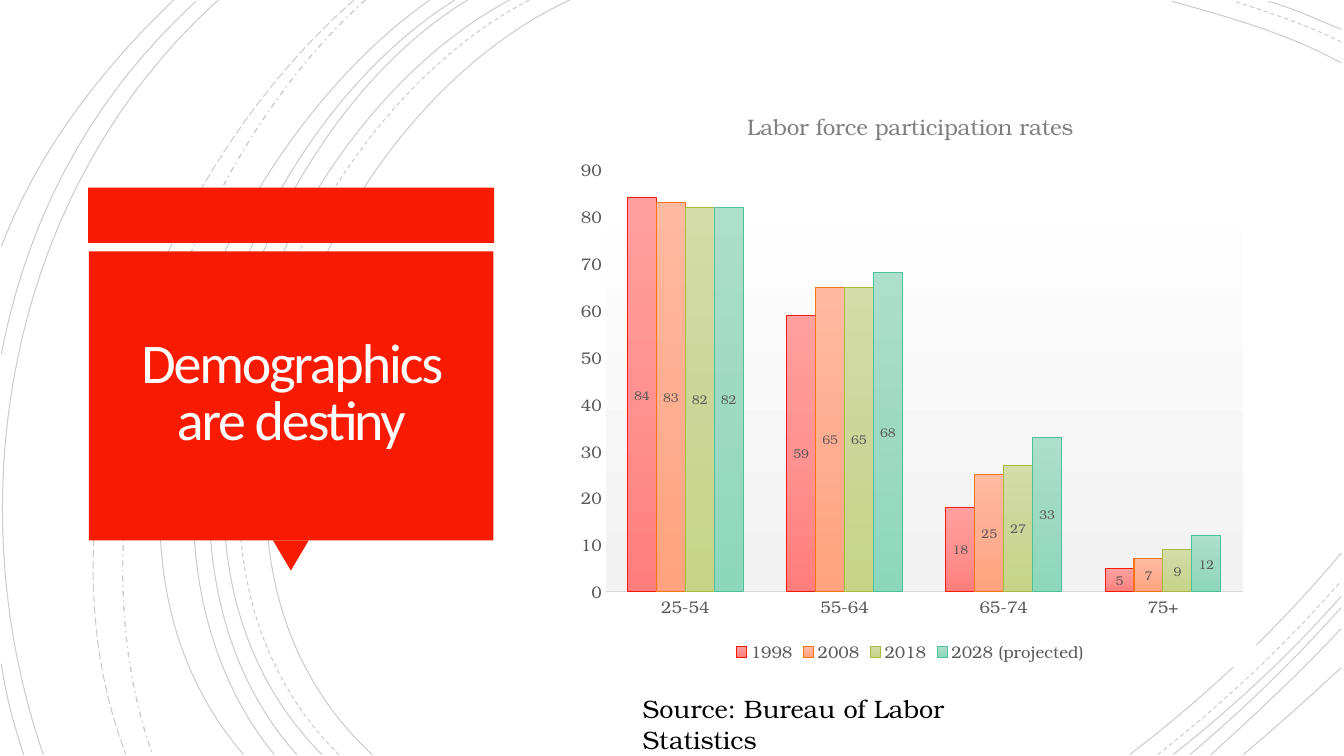
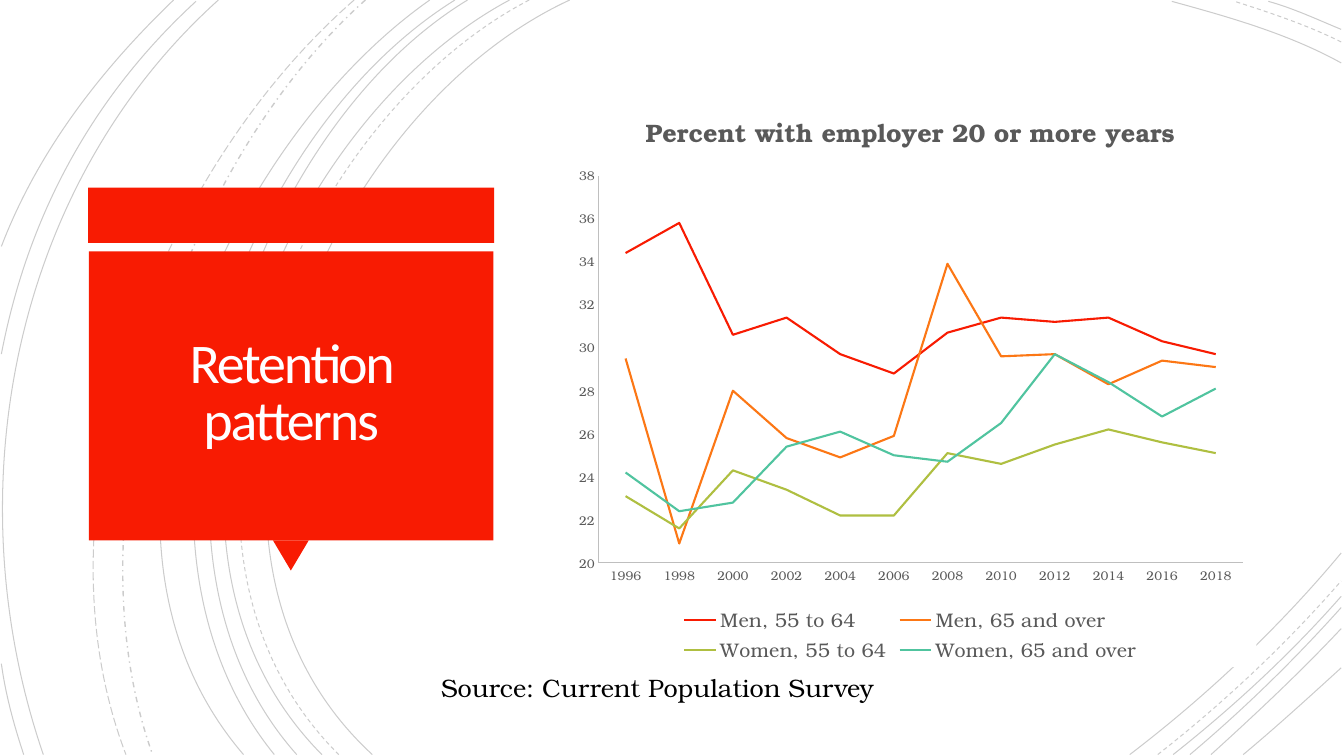
from dataclasses import dataclass, field

from lxml.etree import SubElement
from pptx import Presentation
from pptx.chart.data import CategoryChartData
from pptx.dml.color import RGBColor
from pptx.enum.chart import (XL_CHART_TYPE, XL_LABEL_POSITION,
                             XL_LEGEND_POSITION, XL_TICK_MARK)
from pptx.enum.dml import MSO_LINE
from pptx.enum.shapes import MSO_SHAPE
from pptx.enum.text import MSO_ANCHOR, MSO_AUTO_SIZE, PP_ALIGN
from pptx.oxml import parse_xml
from pptx.oxml.ns import nsdecls, qn
from pptx.util import Pt

# Enum members
COLUMN, LINE = XL_CHART_TYPE.COLUMN_CLUSTERED, XL_CHART_TYPE.LINE
CENTER, BOTTOM = XL_LABEL_POSITION.CENTER, XL_LEGEND_POSITION.BOTTOM
NO_TICK = XL_TICK_MARK.NONE
RECT, WEDGE = MSO_SHAPE.RECTANGLE, MSO_SHAPE.ISOSCELES_TRIANGLE
SOLID, DASH = MSO_LINE.SOLID, MSO_LINE.DASH
LONG, DOTTED = MSO_LINE.LONG_DASH, MSO_LINE.DASH_DOT
MIDDLE, MID_TEXT = MSO_ANCHOR.MIDDLE, PP_ALIGN.CENTER
GROW = MSO_AUTO_SIZE.SHAPE_TO_FIT_TEXT

# Colours and fonts
BLACK = RGBColor(0x00, 0x00, 0x00)
CREAM = RGBColor(0xFF, 0xFE, 0xFF)
WHITE = RGBColor(0xFF, 0xFF, 0xFF)
RED = RGBColor(0xF8, 0x1B, 0x02)
ORANGE = RGBColor(0xFC, 0x77, 0x15)
GREEN = RGBColor(0xAF, 0xBF, 0x41)
TEAL = RGBColor(0x50, 0xC4, 0x9F)
DARK = RGBColor(0x59, 0x59, 0x59)
GRAY = RGBColor(0x7F, 0x7F, 0x7F)
SILVER = RGBColor(0xBF, 0xBF, 0xBF)
PALE = RGBColor(0xD9, 0xD9, 0xD9)
SMOKE = RGBColor(0xF2, 0xF2, 0xF2)
RED_EDGE = RGBColor(0xF3, 0x1A, 0x02)
ORANGE_EDGE = RGBColor(0xF6, 0x74, 0x15)
GREEN_EDGE = RGBColor(0xAB, 0xBB, 0x40)
TEAL_EDGE = RGBColor(0x4E, 0xC0, 0x9B)
RED_FADE = (RGBColor(0xFF, 0xA0, 0x9E), RGBColor(0xFF, 0x92, 0x90), RGBColor(0xFF, 0x7E, 0x7C))
ORANGE_FADE = (RGBColor(0xFF, 0xBA, 0xA0), RGBColor(0xFF, 0xAE, 0x92), RGBColor(0xFF, 0xA2, 0x7E))
GREEN_FADE = (RGBColor(0xD4, 0xDC, 0xA7), RGBColor(0xCC, 0xD6, 0x99), RGBColor(0xC7, 0xD4, 0x87))
TEAL_FADE = (RGBColor(0xAC, 0xDF, 0xCC), RGBColor(0x9E, 0xD9, 0xC3), RGBColor(0x8D, 0xD7, 0xBC))
HEAD_FONT, BODY_FONT = "Calibri", "TeX Gyre Bonum"

Box = tuple[float, float, float, float]
TITLE_BOX: Box = (70, 185, 276, 194)
CHART_BOX: Box = (403, 63.5, 494.5, 413)


@dataclass
class Arc:
    """A cubic curve: start, two control points, end."""
    pts: tuple[tuple[float, float], ...]
    dash: MSO_LINE = SOLID
    width: float = 0.75


@dataclass
class Block:
    kind: MSO_SHAPE
    box: Box
    turn: float = 0


@dataclass
class Row:
    name: str
    vals: tuple[float, ...]
    edge: RGBColor
    fade: tuple[RGBColor, ...] = ()


@dataclass
class Plot:
    kind: XL_CHART_TYPE
    head: str
    head_font: dict
    cats: tuple[str, ...]
    rows: tuple[Row, ...]
    frame: Box  # share of the chart's width and height
    scale: dict
    axis_size: float
    key_size: float
    edge: RGBColor
    width: float
    val_line: bool = True
    fade: tuple[RGBColor, ...] = ()


@dataclass
class Page:
    title: str
    plot: Plot
    note: str
    note_box: Box = field(default=(0, 0, 0, 0))


# Shared background curves
ARCS = (
    Arc(((407, 0), (227, 83), (103, 389), (266, 539))),
    Arc(((958, 45), (920, 24), (877, 12), (837, 1))),
    Arc(((807, 539), (862, 497), (914, 448), (958, 395))),
    Arc(((378, 0), (205, 90), (89, 387), (242, 539)), DASH),
    Arc(((958, 30), (934, 18), (907, 9), (882, 1)), DASH),
    Arc(((827, 539), (873, 503), (918, 461), (958, 415)), DASH),
    Arc(((364, 0), (194, 91), (79, 387), (230, 539))),
    Arc(((958, 21), (941, 14), (924, 6), (906, 1))),
    Arc(((838, 539), (881, 505), (922, 467), (958, 426))),
    Arc(((334, 0), (176, 96), (79, 390), (212, 539))),
    Arc(((850, 539), (888, 507), (924, 472), (958, 434))),
    Arc(((325, 0), (166, 99), (70, 384), (196, 539))),
    Arc(((865, 539), (897, 510), (929, 480), (958, 449))),
    Arc(((307, 0), (156, 106), (38, 381), (174, 539))),
    Arc(((888, 539), (912, 519), (935, 498), (958, 477))),
    Arc(((261, 0), (127, 120), (47, 366), (109, 539)), DOTTED, 1),
    Arc(((253, 0), (113, 122), (21, 359), (90, 539)), LONG),
    Arc(((156, 0), (8, 133), (-33, 353), (31, 539))),
    Arc(((140, 1), (66, 69), (20, 154), (1, 253))),
    Arc(((1, 474), (4, 496), (10, 518), (17, 539))),
    Arc(((124, 0), (72, 50), (27, 108), (1, 176))),
)

# Shared red title panel
BLOCKS = (
    Block(RECT, (63, 134, 290, 39.5)),
    Block(WEDGE, (195, 386, 25.5, 21.5), 180),
    Block(RECT, (63.5, 179.5, 289, 206.5)),
)

# Slide content
PAGES = (
    Page("Demographics are destiny", Plot(
        COLUMN, "Labor force participation rates",
        {"size": Pt(16), "bold": False, "color": GRAY},
        ("25-54", "55-64", "65-74", "75+"),
        (Row("1998", (84, 59, 18, 5), RED_EDGE, RED_FADE),
         Row("2008", (83, 65, 25, 7), ORANGE_EDGE, ORANGE_FADE),
         Row("2018", (82, 65, 27, 9), GREEN_EDGE, GREEN_FADE),
         Row("2028 (projected)", (82, 68, 33, 12), TEAL_EDGE, TEAL_FADE)),
        (0.06, 0.14, 0.92, 0.73),
        {"minimum_scale": 0, "maximum_scale": 90, "major_unit": 10},
        12, 12, PALE, 0.75, False, (WHITE, SMOKE)),
        "Source: Bureau of Labor Statistics", (452, 492, 306, 29)),
    Page("Retention patterns", Plot(
        LINE, "Percent with employer 20 or more years",
        {"size": Pt(18), "bold": True, "color": DARK},
        tuple(str(year) for year in range(1996, 2019, 2)),
        (Row("Men, 55 to 64", (34.4, 35.8, 30.6, 31.4, 29.7, 28.8,
                               30.7, 31.4, 31.2, 31.4, 30.3, 29.7), RED),
         Row("Men, 65 and over", (29.5, 20.9, 28, 25.8, 24.9, 25.9,
                                  33.9, 29.6, 29.7, 28.3, 29.4, 29.1), ORANGE),
         Row("Women, 55 to 64", (23.1, 21.6, 24.3, 23.4, 22.2, 22.2,
                                 25.1, 24.6, 25.5, 26.2, 25.6, 25.1), GREEN),
         Row("Women, 65 and over", (24.2, 22.4, 22.8, 25.4, 26.1, 25,
                                    24.7, 26.5, 29.7, 28.4, 26.8, 28.1), TEAL)),
        (0.05, 0.15, 0.93, 0.67),
        {"minimum_scale": 20, "maximum_scale": 38, "major_unit": 2},
        9, 14, SILVER, 1.5),
        "Source: Current Population Survey", (308, 476.5, 346, 29)),
)


# Small helpers
def apply(item, vals: dict) -> None:
    for name, val in vals.items():
        if name == "color":
            item.color.rgb = val
        else:
            setattr(item, name, val)


def face(size: float, color: RGBColor = DARK) -> dict:
    return {"name": BODY_FONT, "size": Pt(size), "bold": False, "color": color}


def place(box: Box) -> list:
    return [Pt(part) for part in box]


def blend(colors: tuple[RGBColor, ...]):
    step = 100000 // (len(colors) - 1)
    stops = "".join(f'<a:gs pos="{i * step}"><a:srgbClr val="{color}"/></a:gs>'
                    for i, color in enumerate(colors))
    return parse_xml(f'<a:gradFill {nsdecls("a")}><a:gsLst>{stops}</a:gsLst>'
                     '<a:lin ang="5400000" scaled="0"/></a:gradFill>')


# Shapes and text
def draw_arc(slide, arc: Arc) -> None:
    start, *rest = [tuple(place(pt)) for pt in arc.pts]
    pen = slide.shapes.build_freeform(*start)
    pen.add_line_segments(rest, close=False)
    shape = pen.convert_to_shape()
    shape.shadow.inherit = False
    shape.fill.background()
    apply(shape.line, {"color": BLACK, "width": Pt(arc.width), "dash_style": arc.dash})
    tint = shape.element.xpath(".//a:ln//a:srgbClr")[0]
    SubElement(tint, qn("a:alpha")).set("val", "20000")
    # Turn the three straight parts into one curve
    route = shape.element.xpath(".//a:path")[0]
    legs = route.findall(qn("a:lnTo"))
    curve = SubElement(route, qn("a:cubicBezTo"))
    for leg in legs:
        curve.append(leg[0])
        route.remove(leg)


def draw_block(slide, block: Block) -> None:
    shape = slide.shapes.add_shape(block.kind, *place(block.box))
    shape.rotation = block.turn
    shape.shadow.inherit = False
    shape.fill.solid()
    shape.fill.fore_color.rgb = RED
    shape.line.fill.background()


def add_text(slide, text: str, box: Box, font: dict, frame: dict, para: dict):
    area = slide.shapes.add_textbox(*place(box)).text_frame
    apply(area, {"word_wrap": True, **frame})
    line = area.paragraphs[0]
    apply(line, para)
    run = line.add_run()
    run.text = text
    run.font.fill.solid()
    run.font.fill.fore_color.rgb = font["color"]
    apply(run.font, {key: val for key, val in font.items() if key != "color"})
    return run


def add_title(slide, text: str) -> None:
    sides = ("left", "top", "right", "bottom")
    frame = {f"margin_{side}": Pt(18) for side in sides}
    run = add_text(slide, text, TITLE_BOX,
                   {"name": HEAD_FONT, "size": Pt(40), "color": CREAM},
                   {**frame, "vertical_anchor": MIDDLE},
                   {"alignment": MID_TEXT, "line_spacing": 0.85})
    run.font._element.set("spc", "-150")


# Charts
def set_frame(chart, plot: Plot) -> None:
    area = chart.element.find(f'{qn("c:chart")}/{qn("c:plotArea")}')
    for old in area.findall(qn("c:layout")):
        area.remove(old)
    spots = "".join(f'<c:{tag} val="{val}"/>' for tag, val in zip("xywh", plot.frame))
    area.insert(0, parse_xml(
        f'<c:layout {nsdecls("c")}><c:manualLayout><c:layoutTarget val="inner"/>'
        f'<c:xMode val="edge"/><c:yMode val="edge"/>{spots}</c:manualLayout></c:layout>'))
    if plot.fade:
        SubElement(area, qn("c:spPr")).append(blend(plot.fade))
    chart.element.find(qn("c:chart")).addnext(parse_xml(
        f'<c:spPr {nsdecls("c", "a")}><a:solidFill><a:srgbClr val="{WHITE}"/>'
        '</a:solidFill><a:ln><a:noFill/></a:ln></c:spPr>'))


def style_row(series, row: Row, width: float) -> None:
    apply(series.format.line, {"color": row.edge, "width": Pt(width)})
    if not row.fade:
        series.smooth = False
        return
    series._element.get_or_add_spPr().insert(0, blend(row.fade))
    labels = series.data_labels
    apply(labels, {"show_value": True, "position": CENTER,
                   "number_format": "0", "number_format_is_linked": False})
    apply(labels.font, face(9))


def add_plot(slide, plot: Plot) -> None:
    data = CategoryChartData()
    data.categories = plot.cats
    for row in plot.rows:
        data.add_series(row.name, row.vals)
    chart = slide.shapes.add_chart(plot.kind, *place(CHART_BOX), data).chart
    apply(chart.font, face(10, BLACK))
    set_frame(chart, plot)
    # Heading and legend
    head = chart.chart_title.text_frame
    head.text = plot.head
    apply(head.paragraphs[0].runs[0].font, {"name": BODY_FONT, **plot.head_font})
    chart.has_legend = True
    apply(chart.legend, {"position": BOTTOM, "include_in_layout": False})
    apply(chart.legend.font, face(plot.key_size))
    # Axes
    for axis in (chart.category_axis, chart.value_axis):
        apply(axis, {"major_tick_mark": NO_TICK, "minor_tick_mark": NO_TICK,
                     "has_major_gridlines": False})
        apply(axis.tick_labels.font, face(plot.axis_size))
        apply(axis.format.line, {"color": plot.edge, "width": Pt(0.75)})
    apply(chart.value_axis, plot.scale)
    apply(chart.value_axis.tick_labels,
          {"number_format": "0", "number_format_is_linked": False})
    if not plot.val_line:
        chart.value_axis.format.line.fill.background()
    # Series
    group = chart.plots[0]
    group.vary_by_categories = False
    if plot.kind == COLUMN:
        apply(group, {"gap_width": 150, "overlap": 0})
    for series, row in zip(group.series, plot.rows):
        style_row(series, row, plot.width)


def add_page(deck, page: Page) -> None:
    slide = deck.slides.add_slide(deck.slide_layouts[6])
    for arc in ARCS:
        draw_arc(slide, arc)
    for block in BLOCKS:
        draw_block(slide, block)
    add_title(slide, page.title)
    add_plot(slide, page.plot)
    add_text(slide, page.note, page.note_box, face(18, BLACK), {"auto_size": GROW}, {})


def main() -> None:
    deck = Presentation()
    apply(deck, {"slide_width": Pt(960), "slide_height": Pt(540)})
    for page in PAGES:
        add_page(deck, page)
    deck.save("out.pptx")


if __name__ == "__main__":
    main()
